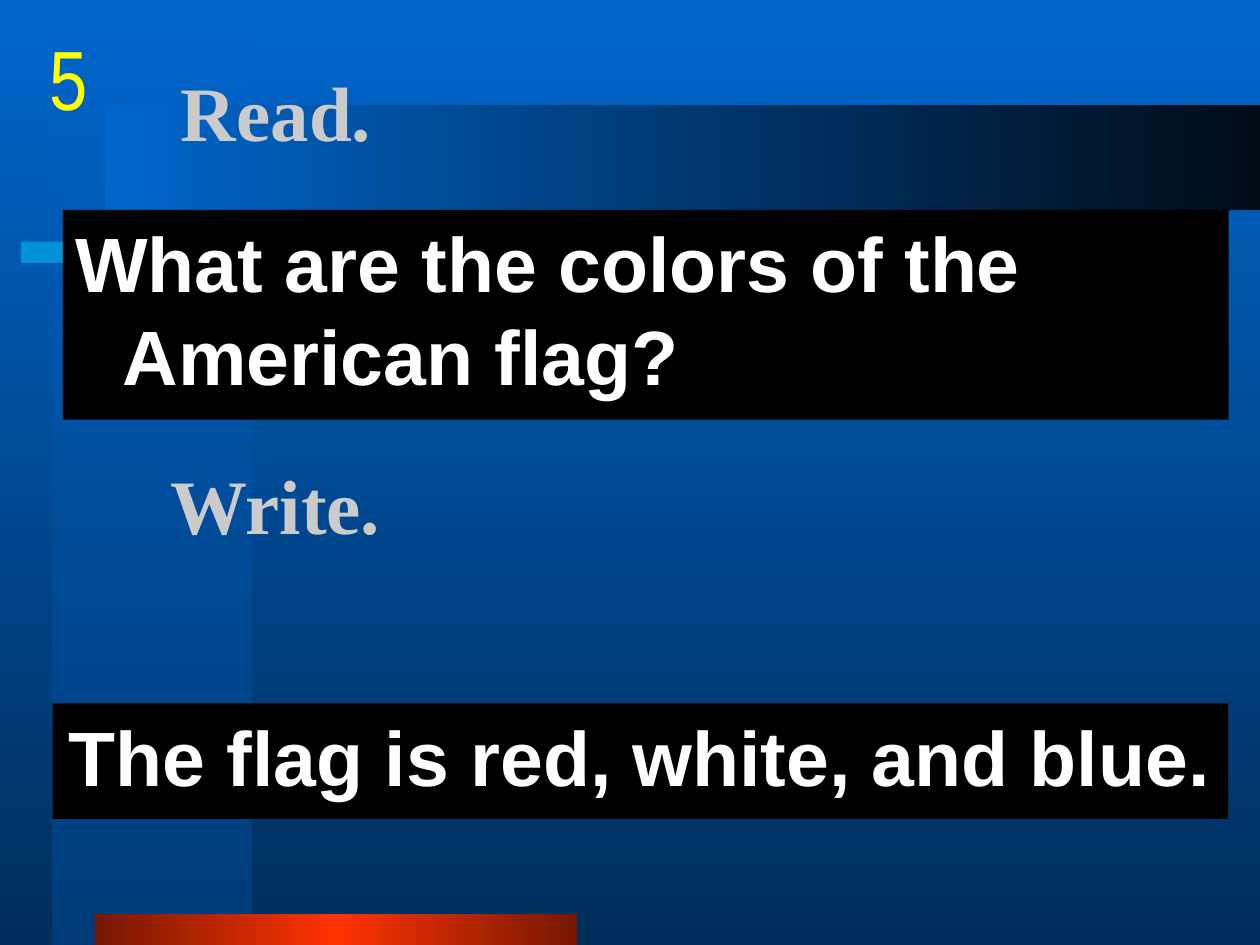
from lxml import etree
from pptx import Presentation
from pptx.dml.color import RGBColor
from pptx.enum.shapes import MSO_SHAPE
from pptx.enum.text import MSO_ANCHOR, MSO_AUTO_SIZE, PP_ALIGN
from pptx.oxml.ns import qn
from pptx.util import Cm, Pt

RECTANGLE = MSO_SHAPE.RECTANGLE
TOP, MIDDLE = MSO_ANCHOR.TOP, MSO_ANCHOR.MIDDLE
NO_AUTOFIT = MSO_AUTO_SIZE.NONE
LEFT, CENTER = PP_ALIGN.LEFT, PP_ALIGN.CENTER
TITLE_ONLY = 5
DOWN, ACROSS = 270, 0
HEADING = {"font": "Times New Roman", "color": "CBCBCB", "bold": True, "anchor": MIDDLE}
SENTENCE = {"font": "Arial", "color": "FFFFFF", "bold": True, "hanging": 0.95, "before": 5}


def rgb(value):
    return RGBColor.from_string(value)


def set_alpha(color_element, percent):
    etree.SubElement(color_element, qn("a:alpha"), val=str(percent * 1000))


def fill_gradient(fill, owner, stops, angle):
    fill.gradient()
    fill.gradient_angle = angle
    stop_list = owner.find(".//" + qn("a:gsLst"))
    for stop in list(stop_list):
        stop_list.remove(stop)
    for position, color, opacity in stops:
        stop = etree.SubElement(stop_list, qn("a:gs"), pos=str(position * 1000))
        color_element = etree.SubElement(stop, qn("a:srgbClr"), val=color)
        if opacity < 100:
            set_alpha(color_element, opacity)


def add_block(slide, left, top, width, height, color=None, opacity=100, stops=None, angle=DOWN):
    block = slide.shapes.add_shape(RECTANGLE, Cm(left), Cm(top), Cm(width), Cm(height))
    block.shadow.inherit = False
    block.line.fill.background()
    if stops:
        fill_gradient(block.fill, block._element, stops, angle)
    else:
        block.fill.solid()
        block.fill.fore_color.rgb = rgb(color)
        if opacity < 100:
            set_alpha(block._element.spPr.find(".//" + qn("a:srgbClr")), opacity)
    return block


def add_text_box(slide, left, top, width, height):
    return slide.shapes.add_textbox(Cm(left), Cm(top), Cm(width), Cm(height))


def write_text(box, text, font, color, size=44, bold=False, align=LEFT, anchor=TOP,
               wrap=True, hanging=0, before=0):
    frame = box.text_frame
    frame.auto_size = NO_AUTOFIT
    frame.word_wrap = wrap
    frame.vertical_anchor = anchor
    para = frame.paragraphs[0]
    para.alignment = align
    para.space_before = Pt(before)
    if hanging:
        properties = para._p.get_or_add_pPr()
        properties.set("marL", str(Cm(hanging)))
        properties.set("indent", str(-Cm(hanging)))
    span = para.add_run()
    span.text = text
    span.font.name = font
    span.font.size = Pt(size)
    span.font.bold = bold
    span.font.color.rgb = rgb(color)


def add_backdrop(slide):
    fill_gradient(slide.background.fill, slide._element,
                  [(0, "0066CC", 100), (100, "002E5C", 100)], DOWN)
    add_block(slide, 1.06, 0, 4.02, 19.05,
              stops=[(0, "0066CC", 50), (100, "003D7A", 100)])
    add_block(slide, 0.42, 4.87, 13.13, 0.43, color="00CCFF", opacity=50)
    add_block(slide, 1.91, 18.42, 9.73, 0.63, angle=ACROSS,
              stops=[(0, "761800", 100), (50, "FF3300", 100), (100, "761800", 100)])
    add_block(slide, 2.12, 2.12, 23.28, 2.12, angle=ACROSS,
              stops=[(0, "0066CC", 100), (100, "000C18", 100)])


def place_title(slide, left, top, width, height):
    title = slide.shapes.title
    title.left, title.top, title.width, title.height = map(Cm, (left, top, width, height))
    slide.shapes._spTree.append(title._element)
    return title


def main():
    deck = Presentation()
    deck.slide_width, deck.slide_height = Cm(25.4), Cm(19.05)
    page = deck.slides.add_slide(deck.slide_layouts[TITLE_ONLY])
    add_backdrop(page)

    title = place_title(page, 3.39, 0.64, 21.59, 3.18)
    write_text(title, "Read.", **HEADING)
    question = add_block(page, 1.27, 4.23, 23.5, 4.23, color="000000")
    write_text(question, "What are the colors of the American flag?", **SENTENCE)
    prompt = add_text_box(page, 3.18, 8.04, 21.59, 4.23)
    write_text(prompt, "Write.", **HEADING)
    answer = add_block(page, 1.06, 14.18, 23.7, 2.33, color="000000")
    write_text(answer, "The flag is red, white, and blue.", align=CENTER, **SENTENCE)
    number = add_text_box(page, 0.85, 0.42, 1.06, 2.12)
    write_text(number, "5", font="Arial Narrow", color="FFFF00", size=48,
               align=CENTER, wrap=False)

    deck.save("out.pptx")


if __name__ == "__main__":
    main()
